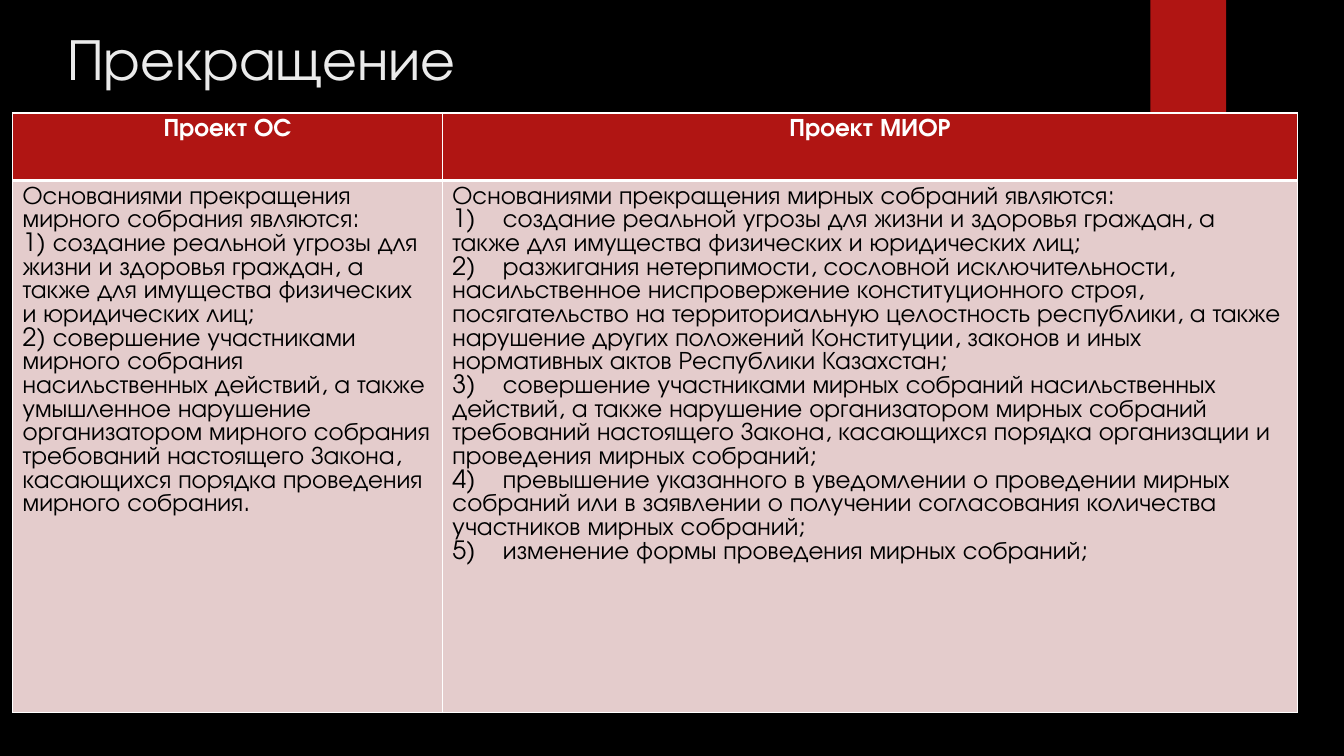
from lxml import etree
from pptx import Presentation
from pptx.dml.color import RGBColor
from pptx.enum import shapes, text
from pptx.oxml import ns
from pptx.util import Pt

THEME = {
    "font": "TeX Gyre Adventor",
    "background": "000000",
    "accent": "B01513",
    "title": "EBEBEB",
    "light": "FFFFFF",
    "dark": "000000",
    "body_fill": "E4CCCC",
    "title_size": 42,
    "table_size": 18,
    "line_spacing": 16.9,
}

COLUMNS = [
    (307, "Проект ОС", [
        "Основаниями прекращения мирного собрания являются:",
        "1) создание реальной угрозы для жизни и здоровья граждан, а также для имущества физических и юридических лиц;",
        "2) совершение участниками мирного собрания насильственных действий, а также умышленное нарушение организатором мирного собрания требований настоящего Закона, касающихся порядка проведения мирного собрания.",
    ]),
    (611, "Проект МИОР", [
        "Основаниями прекращения мирных собраний являются:",
        "1)\tсоздание реальной угрозы для жизни и здоровья граждан, а также для имущества физических и юридических лиц;",
        "2)\tразжигания нетерпимости, сословной исключительности, насильственное ниспровержение конституционного строя, посягательство на территориальную целостность республики, а также нарушение других положений Конституции, законов и иных нормативных актов Республики Казахстан;",
        "3)\tсовершение участниками мирных собраний насильственных действий, а также нарушение организатором мирных собраний требований настоящего Закона, касающихся порядка организации и проведения мирных собраний;",
        "4)\tпревышение указанного в уведомлении о проведении мирных собраний или в заявлении о получении согласования количества участников мирных собраний;",
        "5)\tизменение формы проведения мирных собраний;",
    ]),
]


def style_runs(paragraph, size, color, bold=False):
    for run in paragraph.runs:
        run.font.name = THEME["font"]
        run.font.size = Pt(size)
        run.font.bold = bold
        run.font.color.rgb = RGBColor.from_string(color)


def add_borders(cell, widths):
    properties = cell._tc.get_or_add_tcPr()
    for index, (side, width) in enumerate(widths.items()):
        line = etree.Element(ns.qn(f"a:ln{side}"), w=str(Pt(width)))
        fill = etree.SubElement(line, ns.qn("a:solidFill"))
        etree.SubElement(fill, ns.qn("a:srgbClr"), val=THEME["light"])
        properties.insert(index, line)


presentation = Presentation()
presentation.slide_width = Pt(960)
presentation.slide_height = Pt(540)
slide = presentation.slides.add_slide(presentation.slide_layouts[6])
slide.background.fill.solid()
slide.background.fill.fore_color.rgb = RGBColor.from_string(THEME["background"])

ribbon = slide.shapes.add_shape(
    shapes.MSO_SHAPE.RECTANGLE, Pt(821.8), Pt(0), Pt(54), Pt(90))
ribbon.shadow.inherit = False
ribbon.fill.solid()
ribbon.fill.fore_color.rgb = RGBColor.from_string(THEME["accent"])
ribbon.line.fill.background()

title = slide.shapes.add_textbox(Pt(41), Pt(12.2), Pt(741), Pt(110))
title.text_frame.word_wrap = True
title.text_frame.vertical_anchor = text.MSO_ANCHOR.TOP
title.text_frame.text = "Прекращение"
style_runs(title.text_frame.paragraphs[0], THEME["title_size"], THEME["title"])

table = slide.shapes.add_table(
    2, len(COLUMNS), Pt(9), Pt(80.7), Pt(918), Pt(428.4)).table
for row, height in zip(table.rows, (48.2, 380.2)):
    row.height = Pt(height)

for column, (width, heading, grounds) in enumerate(COLUMNS):
    table.columns[column].width = Pt(width)
    for row, paragraphs in enumerate(([heading], grounds)):
        header = row == 0
        cell = table.cell(row, column)
        cell.fill.solid()
        cell.fill.fore_color.rgb = RGBColor.from_string(
            THEME["accent" if header else "body_fill"])
        add_borders(cell, {"L": 1, "R": 1, "T": 1 if header else 3, "B": 3 if header else 1})
        cell.text_frame.text = "\n".join(paragraphs)
        for paragraph in cell.text_frame.paragraphs:
            paragraph.line_spacing = Pt(THEME["line_spacing"])
            paragraph.alignment = text.PP_ALIGN.CENTER if header else text.PP_ALIGN.LEFT
            if "\t" in paragraph.text:
                tabs = etree.SubElement(paragraph._p.get_or_add_pPr(), ns.qn("a:tabLst"))
                etree.SubElement(tabs, ns.qn("a:tab"), pos=str(Pt(36)), algn="l")
            style_runs(paragraph, THEME["table_size"],
                       THEME["light" if header else "dark"], header)

presentation.save("out.pptx")
